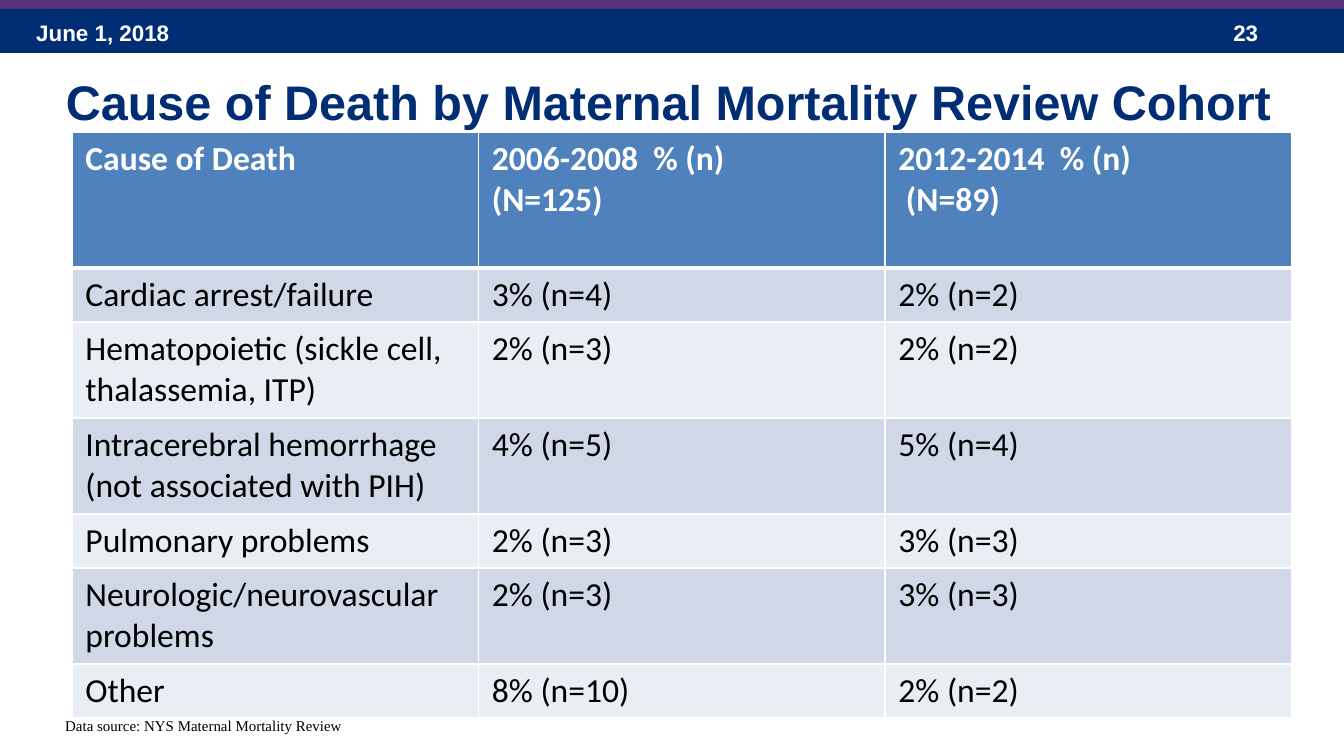
"""Build the slide on causes of death by maternal mortality review cohort."""
from lxml import etree
from pptx import Presentation
from pptx.dml.color import RGBColor
from pptx.enum.shapes import MSO_SHAPE
from pptx.enum.text import MSO_ANCHOR, PP_ALIGN
from pptx.oxml.ns import qn
from pptx.util import Pt

RECTANGLE = MSO_SHAPE.RECTANGLE
CENTER = PP_ALIGN.CENTER
MIDDLE = MSO_ANCHOR.MIDDLE
EMU_PER_PX = 914400 / 134.4
COLORS = {
    "navy": "002D73",
    "purple": "553278",
    "header": "4F81BD",
    "odd": "D0D8E8",
    "even": "E9EDF4",
    "white": "FFFFFF",
    "black": "000000",
}


def px(*lengths):
    return [round(length * EMU_PER_PX) for length in lengths]


def format_text(text_frame, font_name, size, color, bold):
    for paragraph in text_frame.paragraphs:
        for run in paragraph.runs:
            run.font.name = font_name
            run.font.size = Pt(size)
            run.font.bold = bold
            run.font.color.rgb = RGBColor.from_string(COLORS[color])


presentation = Presentation()
presentation.slide_width, presentation.slide_height = px(1344, 756)
slide = presentation.slides.add_slide(presentation.slide_layouts[5])

for top, height, color in [(9, 44, "navy"), (-3, 12, "purple")]:
    band = slide.shapes.add_shape(RECTANGLE, *px(0, top, 1344, height))
    band.shadow.inherit = False
    band.fill.solid()
    band.fill.fore_color.rgb = RGBColor.from_string(COLORS[color])
    band.line.fill.background()

title = slide.shapes.title
title.left, title.top, title.width, title.height = px(0, 38, 1339, 126)
title.text_frame.text = "Cause of Death by Maternal Mortality Review Cohort"
title.text_frame.vertical_anchor = MIDDLE
title.text_frame.paragraphs[0].alignment = CENTER
format_text(title.text_frame, "Arial", 26, "navy", True)

labels = [
    ("June 1, 2018", (23, 13, 313, 40), "Arial", 12, "white", True),
    ("23", (1220, 13, 101, 40), "Arial", 12, "white", True),
    ("Data source: NYS Maternal Mortality Review", (52, 710, 305, 32),
     "Times New Roman", 8, "black", False),
]
for text, box, font_name, size, color, bold in labels:
    label = slide.shapes.add_textbox(*px(*box))
    label.text_frame.word_wrap = bold
    label.text_frame.text = text
    format_text(label.text_frame, font_name, size, color, bold)

rows = [
    ("Cause of Death", "2006-2008  % (n)\n(N=125)", "2012-2014  % (n)\n (N=89)"),
    ("Cardiac arrest/failure", "3% (n=4)", "2% (n=2)"),
    ("Hematopoietic (sickle cell, thalassemia, ITP)", "2% (n=3)", "2% (n=2)"),
    ("Intracerebral hemorrhage\n(not associated with PIH)", "4% (n=5)", "5% (n=4)"),
    ("Pulmonary problems", "2% (n=3)", "3% (n=3)"),
    ("Neurologic/neurovascular problems", "2% (n=3)", "3% (n=3)"),
    ("Other", "8% (n=10)", "2% (n=2)"),
]
row_heights = px(136, 54, 96, 96, 54, 96, 54)
table = slide.shapes.add_table(len(rows), 3, *px(72, 132, 1219, 586)).table
for column in table.columns:
    column.width = px(406.5)[0]

for row_index, values in enumerate(rows):
    table.rows[row_index].height = row_heights[row_index]
    is_header = row_index == 0
    fill = "header" if is_header else ("even", "odd")[row_index % 2]
    for column_index, value in enumerate(values):
        cell = table.cell(row_index, column_index)
        cell.text_frame.text = value
        format_text(cell.text_frame, "Calibri", 18,
                    "white" if is_header else "black", is_header)
        properties = cell._tc.get_or_add_tcPr()
        for side in "LRTB":
            thick = (side == "B" and is_header) or (side == "T" and row_index == 1)
            border = etree.SubElement(properties, qn(f"a:ln{side}"),
                                      w=str(Pt(3 if thick else 1)))
            border_fill = etree.SubElement(border, qn("a:solidFill"))
            etree.SubElement(border_fill, qn("a:srgbClr"), val=COLORS["white"])
        cell.fill.solid()
        cell.fill.fore_color.rgb = RGBColor.from_string(COLORS[fill])

presentation.save("out.pptx")
